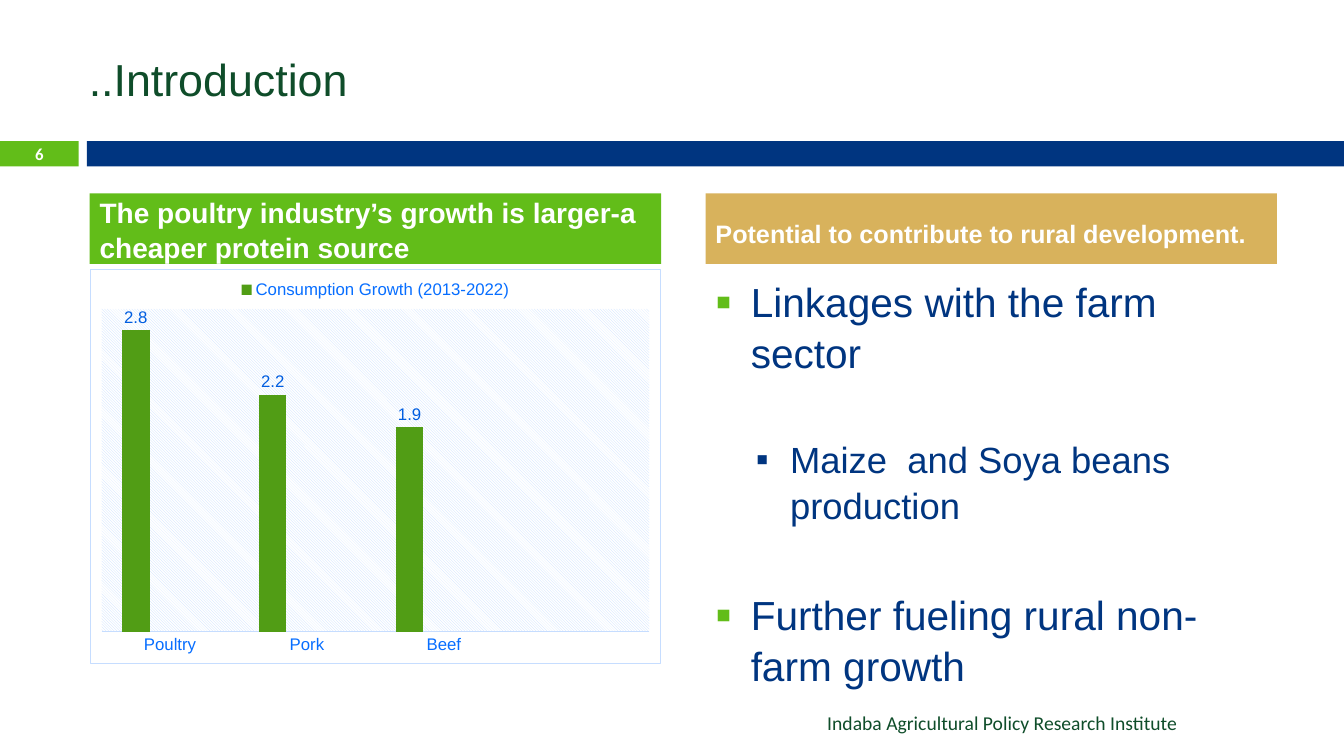
"""Build the introduction slide on poultry growth and rural development."""
from dataclasses import dataclass

import lxml.etree
import pptx
import pptx.chart.data
import pptx.dml.color
import pptx.enum.chart
import pptx.enum.dml
import pptx.enum.shapes
import pptx.enum.text
import pptx.oxml
import pptx.oxml.ns
import pptx.util

Pt = pptx.util.Pt
ALIGN = pptx.enum.text.PP_ALIGN
ANCHOR = pptx.enum.text.MSO_ANCHOR
NAMESPACES = pptx.oxml.ns.nsdecls("a", "c")


@dataclass(frozen=True)
class Theme:
    green: str = "62BD19"
    navy: str = "003580"
    gold: str = "D8B25C"
    forest: str = "0F4D2A"
    white: str = "FFFFFF"
    pale_blue: str = "C6DDFF"
    axis_blue: str = "076EFF"
    value_blue: str = "005DE0"
    series: tuple[str, ...] = ("519D15", "62BD19", "AFD7A2")
    sans: str = "Arial"
    small_caps_font: str = "Calibri"
    title_size: float = 32
    point_size: float = 29
    subpoint_size: float = 26
    growth_size: float = 20
    potential_size: float = 18
    footer_size: float = 14
    number_size: float = 12
    chart_size: float = 12


@dataclass(frozen=True)
class Box:
    left: float
    top: float
    width: float
    height: float


@dataclass(frozen=True)
class Panel:
    box: Box
    fill: str
    text: str = ""
    size: float = 12
    font: str = "Arial"
    align: ALIGN = ALIGN.LEFT
    top_inset: float = 0


@dataclass(frozen=True)
class Point:
    text: str
    size: float
    level: int
    indent: float
    hanging: float
    before: float
    bullet_color: str
    bullet_percent: int


THEME = Theme()
COLUMN_WIDTH = 408.2
LEFT_COLUMN, RIGHT_COLUMN = 64.1, 504
HEADING_TOP, HEADING_HEIGHT = 138.2, 50.4
CONTENT_TOP, CONTENT_HEIGHT = 192.2, 282.2
BAND_TOP, BAND_HEIGHT = 100.8, 18

PANELS = (
    Panel(Box(0, BAND_TOP, 56.2, BAND_HEIGHT), THEME.green, "6",
          THEME.number_size, THEME.small_caps_font, ALIGN.CENTER),
    Panel(Box(62, BAND_TOP, 898, BAND_HEIGHT), THEME.navy),
    Panel(Box(LEFT_COLUMN, HEADING_TOP, COLUMN_WIDTH, HEADING_HEIGHT), THEME.green,
          "The poultry industry’s growth is larger-a cheaper protein source",
          THEME.growth_size),
    Panel(Box(RIGHT_COLUMN, HEADING_TOP, COLUMN_WIDTH, HEADING_HEIGHT), THEME.gold,
          "Potential to contribute to rural development.",
          THEME.potential_size, top_inset=6),
)
POINTS = (
    Point("Linkages with the farm sector", THEME.point_size, 0, 25.2, 25.2, 0,
          THEME.green, 115),
    Point("Maize  and Soya beans production", THEME.subpoint_size, 1, 53.3, 24.5, 42,
          THEME.navy, 100),
    Point("Further fueling rural non-farm growth", THEME.point_size, 0, 25.2, 25.2, 43,
          THEME.green, 115),
)
CATEGORIES = ("Poultry", "Pork", "Beef", "")
SERIES = {
    "Consumption Growth (2013-2022)": (2.8, 2.2, 1.9, None),
    "Series 2": (None,) * 4,
    "Series 3": (None,) * 4,
}


def rgb(color: str) -> pptx.dml.color.RGBColor:
    """Turn a hex string into a colour."""
    return pptx.dml.color.RGBColor.from_string(color)


def place(shape, box: Box) -> None:
    """Move and size a shape."""
    shape.left, shape.top = Pt(box.left), Pt(box.top)
    shape.width, shape.height = Pt(box.width), Pt(box.height)


def style_font(font, *, size: float, color: str, name: str = THEME.sans,
               bold: bool = False) -> None:
    """Set the face, size and colour of a font."""
    font.name, font.size, font.bold = name, Pt(size), bold
    font.color.rgb = rgb(color)


def write(frame, text: str, *, size: float, color: str, name: str = THEME.sans,
          bold: bool = False, align: ALIGN = ALIGN.LEFT, anchor: ANCHOR = ANCHOR.MIDDLE,
          spacing: float = 1.0, insets: tuple[float, float] = (3.6, 3.6)) -> None:
    """Write one formatted paragraph into a text frame."""
    frame.word_wrap = True
    frame.auto_size = pptx.enum.text.MSO_AUTO_SIZE.NONE
    frame.vertical_anchor = anchor
    frame.margin_top, frame.margin_bottom = map(Pt, insets)
    paragraph = frame.paragraphs[0]
    paragraph.alignment, paragraph.line_spacing = align, spacing
    run = paragraph.add_run()
    run.text = text
    style_font(run.font, size=size, color=color, name=name, bold=bold)


def draw_panel(slide, panel: Panel) -> None:
    """Draw a filled rectangle with its optional bold label."""
    shape = slide.shapes.add_shape(pptx.enum.shapes.MSO_SHAPE.RECTANGLE, 0, 0, 0, 0)
    place(shape, panel.box)
    shape.shadow.inherit = False
    shape.fill.solid()
    shape.fill.fore_color.rgb = rgb(panel.fill)
    shape.line.fill.background()
    if panel.text:
        write(shape.text_frame, panel.text, size=panel.size, color=THEME.white,
              name=panel.font, bold=True, align=panel.align, spacing=1.05,
              insets=(panel.top_inset, 0))


def draw_points(slide, box: Box, points: tuple[Point, ...]) -> None:
    """Draw the bulleted list."""
    frame = slide.shapes.add_textbox(0, 0, 0, 0)
    place(frame, box)
    frame = frame.text_frame
    frame.word_wrap = True
    for index, point in enumerate(points):
        paragraph = frame.add_paragraph() if index else frame.paragraphs[0]
        paragraph.level = point.level
        paragraph.line_spacing = 1.05
        paragraph.space_before = Pt(point.before)
        properties = paragraph._p.get_or_add_pPr()
        properties.set("marL", str(Pt(point.indent)))
        properties.set("indent", str(-Pt(point.hanging)))
        for bullet in (
            f'<a:buClr {NAMESPACES}><a:srgbClr val="{point.bullet_color}"/></a:buClr>',
            f'<a:buSzPct {NAMESPACES} val="{point.bullet_percent * 1000}"/>',
            f'<a:buFont {NAMESPACES} typeface="{THEME.sans}"/>',
            f'<a:buChar {NAMESPACES} char="▪"/>',
        ):
            properties.append(pptx.oxml.parse_xml(bullet))
        run = paragraph.add_run()
        run.text = point.text
        style_font(run.font, size=point.size, color=THEME.navy)


def finish_chart(chart) -> None:
    """Add the frame, hatched plot area, plot layout and hidden legend entries."""
    space = chart._chartSpace
    line = f'<a:solidFill><a:srgbClr val="{THEME.pale_blue}"/></a:solidFill>'
    space.find(pptx.oxml.ns.qn("c:chart")).addnext(pptx.oxml.parse_xml(
        f'<c:spPr {NAMESPACES}><a:solidFill><a:srgbClr val="{THEME.white}"/></a:solidFill>'
        f'<a:ln w="{Pt(0.75)}">{line}</a:ln></c:spPr>'))
    area = space.find(".//" + pptx.oxml.ns.qn("c:plotArea"))
    for layout in area.findall(pptx.oxml.ns.qn("c:layout")):
        area.remove(layout)
    edges = "".join(f'<c:{key} val="{value}"/>' for key, value in (
        ("layoutTarget", "inner"), ("xMode", "edge"), ("yMode", "edge"),
        ("x", 0.02), ("y", 0.1), ("w", 0.96), ("h", 0.82)))
    area.insert(0, pptx.oxml.parse_xml(
        f"<c:layout {NAMESPACES}><c:manualLayout>{edges}</c:manualLayout></c:layout>"))
    area.append(pptx.oxml.parse_xml(
        f'<c:spPr {NAMESPACES}><a:pattFill prst="ltDnDiag">'
        f'<a:fgClr><a:srgbClr val="{THEME.pale_blue}"/></a:fgClr>'
        f'<a:bgClr><a:srgbClr val="{THEME.white}"/></a:bgClr></a:pattFill></c:spPr>'))
    position = space.find(".//" + pptx.oxml.ns.qn("c:legendPos"))
    for index in (2, 1):
        position.addnext(pptx.oxml.parse_xml(
            f'<c:legendEntry {NAMESPACES}><c:idx val="{index}"/>'
            '<c:delete val="1"/></c:legendEntry>'))


def draw_growth_chart(slide, box: Box) -> None:
    """Draw the consumption growth columns."""
    growth = pptx.chart.data.CategoryChartData(number_format="0.0")
    growth.categories = CATEGORIES
    for name, values in SERIES.items():
        growth.add_series(name, values)
    frame = slide.shapes.add_chart(pptx.enum.chart.XL_CHART_TYPE.COLUMN_CLUSTERED,
                                   0, 0, 0, 0, growth)
    place(frame, box)
    chart = frame.chart
    style_font(chart.font, size=10, color=THEME.navy)
    chart.has_title = False
    chart.has_legend = True
    chart.legend.position = pptx.enum.chart.XL_LEGEND_POSITION.TOP
    chart.legend.include_in_layout = False
    style_font(chart.legend.font, size=THEME.chart_size, color=THEME.axis_blue)
    meats, scale = chart.category_axis, chart.value_axis
    meats.major_tick_mark = pptx.enum.chart.XL_TICK_MARK.NONE
    meats.format.line.color.rgb = rgb(THEME.pale_blue)
    meats.format.line.width = Pt(0.75)
    style_font(meats.tick_labels.font, size=THEME.chart_size, color=THEME.axis_blue)
    scale.visible = scale.has_major_gridlines = False
    scale.minimum_scale, scale.maximum_scale = 0, 3
    plot = chart.plots[0]
    plot.gap_width, plot.overlap, plot.vary_by_categories = 150, -25, False
    for series, color in zip(plot.series, THEME.series):
        series.format.fill.solid()
        series.format.fill.fore_color.rgb = rgb(color)
        labels = series.data_labels
        labels.show_value = True
        labels.position = pptx.enum.chart.XL_LABEL_POSITION.OUTSIDE_END
        style_font(labels.font, size=THEME.chart_size, color=THEME.value_blue)
    finish_chart(chart)


def main() -> None:
    """Build and save the slide."""
    deck = pptx.Presentation()
    deck.slide_width, deck.slide_height = Pt(960), Pt(540)
    slide = deck.slides.add_slide(deck.slide_layouts[5])
    title = slide.shapes.title
    place(title, Box(56.2, 21.6, 856, 68.4))
    write(title.text_frame, "..Introduction", size=THEME.title_size, color=THEME.forest)
    for panel in PANELS:
        draw_panel(slide, panel)
    draw_growth_chart(slide, Box(LEFT_COLUMN, CONTENT_TOP, COLUMN_WIDTH, CONTENT_HEIGHT))
    draw_points(slide, Box(RIGHT_COLUMN, CONTENT_TOP, COLUMN_WIDTH, CONTENT_HEIGHT), POINTS)
    footer = slide.shapes.add_textbox(0, 0, 0, 0)
    place(footer, Box(440, 504, COLUMN_WIDTH, 24.5))
    write(footer.text_frame, "Indaba Agricultural Policy Research Institute",
          size=THEME.footer_size, color=THEME.forest, name=THEME.small_caps_font,
          align=ALIGN.RIGHT, anchor=ANCHOR.TOP)
    deck.save("out.pptx")


if __name__ == "__main__":
    main()
